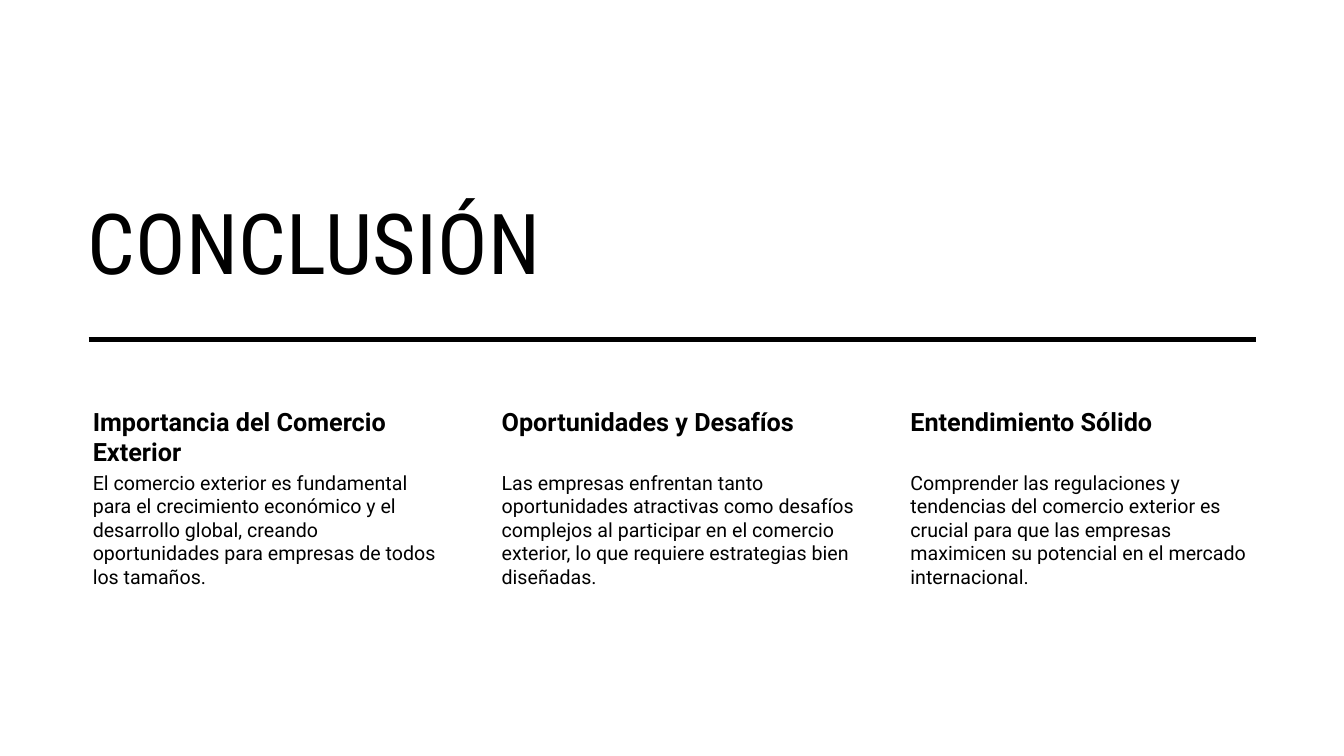
import pptx
import pptx.dml.color
import pptx.enum.shapes
import pptx.enum.text
import pptx.oxml
import pptx.util
from pptx.util import Inches

# Content
TITLE = "CONCLUSIÓN"
COLUMNS = [
    ("Importancia del Comercio Exterior",
     "El comercio exterior es fundamental para el crecimiento económico y el "
     "desarrollo global, creando oportunidades para empresas de todos los tamaños."),
    ("Oportunidades y Desafíos",
     "Las empresas enfrentan tanto oportunidades atractivas como desafíos complejos "
     "al participar en el comercio exterior, lo que requiere estrategias bien diseñadas."),
    ("Entendimiento Sólido",
     "Comprender las regulaciones y tendencias del comercio exterior es crucial para "
     "que las empresas maximicen su potencial en el mercado internacional."),
]

# Theme
THEME = {
    "ink": pptx.dml.color.RGBColor(0, 0, 0),
    "paper": pptx.dml.color.RGBColor(255, 255, 255),
    "title_font": "Roboto Condensed",
    "body_font": "Roboto",
    "title_size": 60,
    "heading_size": 18,
    "body_size": 14,
    "rule_width": 3.5,
}

# Layout in inches
LEFT, LAST_LEFT, COLUMN_WIDTH = 0.77, 8.88, 3.69
COLUMN_PITCH = (LAST_LEFT - LEFT) / (len(COLUMNS) - 1)
HEADING_TOP, HEADING_HEIGHT, BODY_HEIGHT = 4, 0.65, 2.1
RULE_LEFT, RULE_RIGHT, RULE_TOP = 0.88, 12.46, 3.37


def add_text(shapes, text, box, insets, font, size, bold=False):
    shape = shapes.add_textbox(*(Inches(length) for length in box))
    frame = shape.text_frame
    frame.text = text
    frame.word_wrap = True
    frame.margin_left, frame.margin_top, frame.margin_right, frame.margin_bottom = (
        Inches(inset) for inset in insets)
    run = frame.paragraphs[0].runs[0]
    run.font.name = font
    run.font.size = pptx.util.Pt(size)
    run.font.bold = bold
    run.font.color.rgb = THEME["ink"]
    return shape


def main():
    presentation = pptx.Presentation()
    presentation.slide_width = Inches(13.33)
    presentation.slide_height = Inches(7.5)
    slide = presentation.slides.add_slide(presentation.slide_layouts[6])
    slide.background.fill.solid()
    slide.background.fill.fore_color.rgb = THEME["paper"]

    # Title, slightly letterspaced
    title = add_text(slide.shapes, TITLE, (LEFT, 1.4, 8.74, 1.54),
                     (0.1, 0.05, 0.1, 0.05), THEME["title_font"], THEME["title_size"])
    title.text_frame.vertical_anchor = pptx.enum.text.MSO_ANCHOR.BOTTOM
    title_run = title.text_frame.paragraphs[0].runs[0]
    title_run.font._element.set("spc", "30")

    # Heading and body columns
    columns = slide.shapes.add_group_shape()
    for index, (heading, body) in enumerate(COLUMNS):
        left = LEFT + index * COLUMN_PITCH
        add_text(columns.shapes, heading,
                 (left, HEADING_TOP, COLUMN_WIDTH, HEADING_HEIGHT),
                 (0.15, 0.03, 0.03, 0.03),
                 THEME["body_font"], THEME["heading_size"], bold=True)
        add_text(columns.shapes, body,
                 (left, HEADING_TOP + HEADING_HEIGHT, COLUMN_WIDTH, BODY_HEIGHT),
                 (0.15, 0.02, 0.02, 0.02),
                 THEME["body_font"], THEME["body_size"])

    # Rule under the title
    rule = slide.shapes.add_connector(
        pptx.enum.shapes.MSO_CONNECTOR.STRAIGHT,
        Inches(RULE_LEFT), Inches(RULE_TOP), Inches(RULE_RIGHT), Inches(RULE_TOP))
    rule.line.color.rgb = THEME["ink"]
    rule.line.width = pptx.util.Pt(THEME["rule_width"])
    rule._element.spPr.append(pptx.oxml.parse_xml(
        '<a:effectLst xmlns:a="http://schemas.openxmlformats.org/drawingml/2006/main"/>'))

    presentation.save("out.pptx")


if __name__ == "__main__":
    main()
